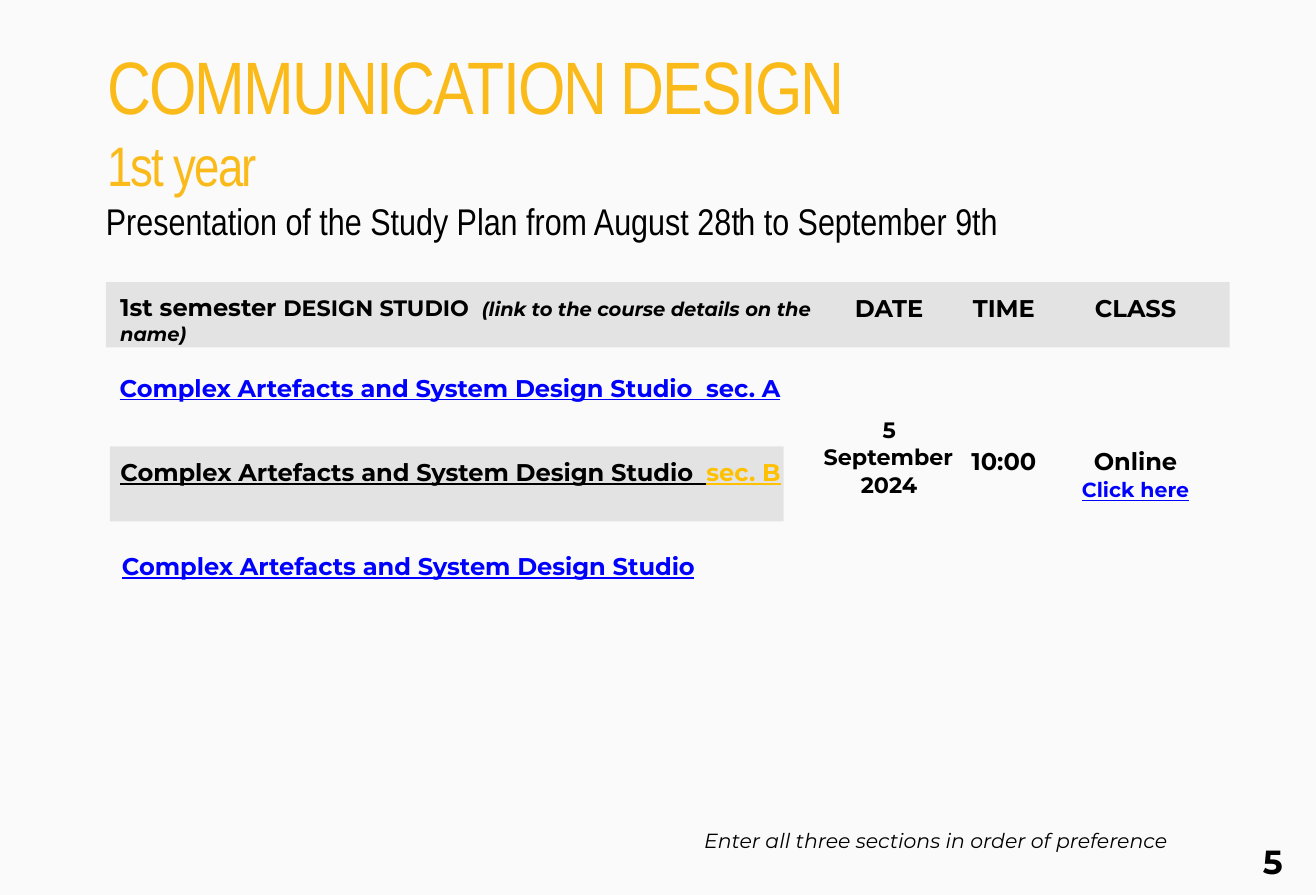
from dataclasses import dataclass

from pptx import Presentation
from pptx.dml.color import RGBColor
from pptx.enum.shapes import MSO_SHAPE as Shape
from pptx.enum.text import PP_ALIGN as Align
from pptx.util import Inches, Pt

WIDTH, HEIGHT = Pt(709), Pt(482)
COLUMNS = ROWS = 100

YELLOW, AMBER = "FABB1A", "FFC000"
BLACK, BLUE = "000000", "0000FF"
GREY, PAPER = "E3E3E3", "FAFAFA"
NARROW, MONTSERRAT = "Arial Narrow", "Montserrat"
HEADER_ROW = 32.72
COURSE = "Complex Artefacts and System Design Studio"


@dataclass(frozen=True)
class Area:
    """A rectangle in grid columns and rows."""
    column: float
    row: float
    columns: float
    rows: float

    def lengths(self) -> tuple:
        return (int(self.column * WIDTH / COLUMNS), int(self.row * HEIGHT / ROWS),
                int(self.columns * WIDTH / COLUMNS), int(self.rows * HEIGHT / ROWS))


@dataclass(frozen=True)
class Run:
    text: str
    size: float = 13
    color: str = BLACK
    font: str = MONTSERRAT
    bold: bool = True
    italic: bool = False
    underline: bool = False
    spacing: float = 0
    breaks: bool = False


@dataclass(frozen=True)
class ScheduleColumn:
    heading: str
    column: float
    columns: float
    row: float
    values: list


def rgb(color: str) -> RGBColor:
    return RGBColor.from_string(color)


def add_bar(slide, area: Area) -> None:
    shape = slide.shapes.add_shape(Shape.RECTANGLE, *area.lengths())
    shape.shadow.inherit = False
    shape.fill.solid()
    shape.fill.fore_color.rgb = rgb(GREY)
    shape.line.fill.background()


def add_text(slide, area: Area, paragraphs: list, *, align=Align.LEFT,
             before: float = 1, indent: float = 0.01) -> None:
    """Add a text box; each paragraph is a list of runs."""
    frame = slide.shapes.add_textbox(*area.lengths()).text_frame
    frame.word_wrap = True
    frame.margin_left = frame.margin_top = frame.margin_right = frame.margin_bottom = 0
    for index, runs in enumerate(paragraphs):
        paragraph = frame.add_paragraph() if index else frame.paragraphs[0]
        paragraph.alignment = align
        paragraph.space_before = Pt(before)
        paragraph._p.get_or_add_pPr().set("indent", str(int(Inches(indent))))
        for item in runs:
            run = paragraph.add_run()
            run.text = item.text
            font = run.font
            font.name, font.size = item.font, Pt(item.size)
            font.bold, font.italic, font.underline = item.bold, item.italic, item.underline
            font.color.rgb = rgb(item.color)
            if item.spacing:
                run._r.get_or_add_rPr().set("spc", str(int(item.spacing * 100)))
            if item.breaks:
                paragraph.add_line_break()


def title_run(text: str, size: float, color: str, spacing: float = 0, breaks: bool = False) -> Run:
    return Run(text, size, color, NARROW, bold=False, spacing=spacing, breaks=breaks)


def link(text: str, color: str = BLUE, size: float = 13) -> Run:
    return Run(text, size, color, underline=True)


TITLE = [
    [title_run("COMMUNICATION DESIGN", 40, YELLOW, -1)],
    [title_run("1st year", 30, YELLOW, -1, breaks=True),
     title_run("Presentation of the Study Plan from August 28", 20, BLACK),
     title_run("th", 20, BLACK, -1),
     title_run(" to September 9th", 20, BLACK)],
]
TABLE_HEADING = [
    Run("1st semester "),
    Run("DESIGN STUDIO  ", 12),
    Run("(link to the course details on the name)", 10.5, italic=True),
]
COURSES = [
    (9, 41.7, [link(COURSE + "  sec. A")]),
    (9.05, 51.1, [link(COURSE + "  ", BLACK), link("sec. B", AMBER)]),
    (9.17, 61.63, [link(COURSE)]),
]
SCHEDULE = [
    ScheduleColumn("DATE", 62.03, 10.96, 46.5, [[Run("5 September", 12)], [Run("2024", 12)]]),
    ScheduleColumn("TIME", 70.75, 10.96, 49.9, [[Run("10:00")]]),
    ScheduleColumn("CLASS", 81.47, 9.54, 49.9, [[Run("Online")], [link("Click here", size=11)]]),
]


def main() -> None:
    presentation = Presentation()
    presentation.slide_width, presentation.slide_height = WIDTH, HEIGHT
    slide = presentation.slides.add_slide(presentation.slide_layouts[6])
    slide.background.fill.solid()
    slide.background.fill.fore_color.rgb = rgb(PAPER)

    add_text(slide, Area(8.05, 4.48, 82.3, 22.8), TITLE)
    add_bar(slide, Area(8.05, 31.52, 85.4, 7.3))
    add_bar(slide, Area(8.35, 49.87, 51.2, 8.4))
    add_text(slide, Area(9.14, HEADER_ROW, 52.6, 6), [TABLE_HEADING], indent=0)
    for column, row, runs in COURSES:
        add_text(slide, Area(column, row, 52, 3.3), [runs])
    for entry in SCHEDULE:
        add_text(slide, Area(entry.column, HEADER_ROW, entry.columns, 3.3),
                 [[Run(entry.heading)]], align=Align.CENTER)
        add_text(slide, Area(entry.column, entry.row, entry.columns, 9.5),
                 entry.values, align=Align.CENTER)
    add_text(slide, Area(33.75, 92.55, 55, 2.8),
             [[Run("Enter all three sections in order of preference", 11, bold=False, italic=True)]],
             align=Align.RIGHT)
    add_text(slide, Area(95.55, 94, 2.64, 4.6), [[Run("5", 18)]], before=2, indent=0.04)
    presentation.save("out.pptx")


if __name__ == "__main__":
    main()
